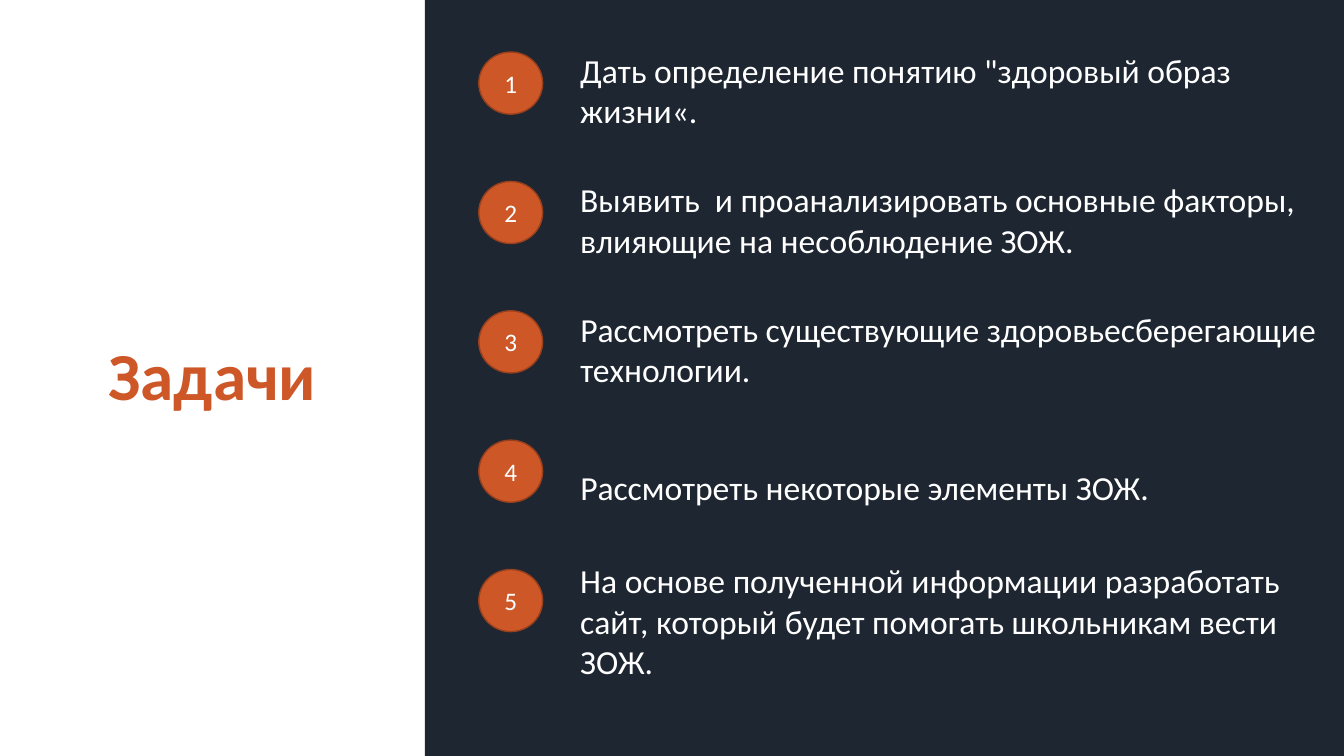
from pptx import Presentation
from pptx.dml.color import RGBColor
from pptx.enum.shapes import MSO_SHAPE
from pptx.enum.text import MSO_ANCHOR, PP_ALIGN
from pptx.util import Emu, Pt

EMU_PER_PX = 7620  # 120 px to the inch
SLIDE_WIDTH, SLIDE_HEIGHT = 1600, 900
PANEL_LEFT = 506
FIRST_TOP, ROW_PITCH = 62, 154

WHITE = RGBColor(0xFF, 0xFF, 0xFF)
ORANGE = RGBColor(0xCD, 0x57, 0x27)
BROWN = RGBColor(0x98, 0x40, 0x1D)
NAVY = RGBColor(0x1E, 0x26, 0x31)

# Wording, shift from the row's top, width, height
TASKS = [
    ('Дать определение понятию "здоровый образ жизни«.', 0, 888, 91),
    ("Выявить  и проанализировать основные факторы, "
     "влияющие на несоблюдение ЗОЖ.", 0, 888, 91),
    ("Рассмотреть существующие здоровьесберегающие технологии.", 0, 908, 91),
    ("Рассмотреть некоторые элементы ЗОЖ.", 10, 908, 91),
    ("На основе полученной информации разработать сайт, "
     "который будет помогать школьникам вести ЗОЖ.", 0, 888, 122),
]


def px(length):
    return Emu(length * EMU_PER_PX)


def write(frame, text, size, color=WHITE, bold=False, align=PP_ALIGN.LEFT,
          line_spacing=None):
    frame.word_wrap = True
    frame.vertical_anchor = MSO_ANCHOR.MIDDLE
    paragraph = frame.paragraphs[0]
    paragraph.alignment = align
    paragraph.line_spacing = line_spacing
    run = paragraph.add_run()
    run.text = text
    run.font.name = "Calibri"
    run.font.size = Pt(size)
    run.font.bold = bold
    run.font.color.rgb = color


def add_label(slide, left, top, width, height, text, **text_format):
    label = slide.shapes.add_textbox(px(left), px(top), px(width), px(height))
    write(label.text_frame, text, **text_format)


def add_filled(slide, kind, left, top, width, height, fill, outline=None):
    """Add a flat preset shape, outlined only when a colour is given."""
    shape = slide.shapes.add_shape(kind, px(left), px(top), px(width), px(height))
    shape.shadow.inherit = False
    shape.fill.solid()
    shape.fill.fore_color.rgb = fill
    if outline is None:
        shape.line.fill.background()
    else:
        shape.line.color.rgb = outline
        shape.line.width = Pt(1)
    return shape


def add_task(slide, number, top, text, shift, width, height):
    badge = add_filled(slide, MSO_SHAPE.OVAL, 570, top, 76, 74, ORANGE, BROWN)
    write(badge.text_frame, str(number), size=18, align=PP_ALIGN.CENTER)
    add_label(slide, 679, top + shift, width, height, text, size=24)


def main():
    deck = Presentation()
    deck.slide_width, deck.slide_height = px(SLIDE_WIDTH), px(SLIDE_HEIGHT)
    slide = deck.slides.add_slide(deck.slide_layouts[6])
    slide.background.fill.solid()
    slide.background.fill.fore_color.rgb = WHITE

    add_label(slide, 0, 364, PANEL_LEFT, 174, "Задачи", size=48, color=ORANGE,
              bold=True, align=PP_ALIGN.CENTER, line_spacing=0.9)
    add_filled(slide, MSO_SHAPE.RECTANGLE, PANEL_LEFT, 0,
               SLIDE_WIDTH - PANEL_LEFT, SLIDE_HEIGHT, NAVY)
    for index, task in enumerate(TASKS):
        add_task(slide, index + 1, FIRST_TOP + index * ROW_PITCH, *task)

    deck.save("out.pptx")


if __name__ == "__main__":
    main()
